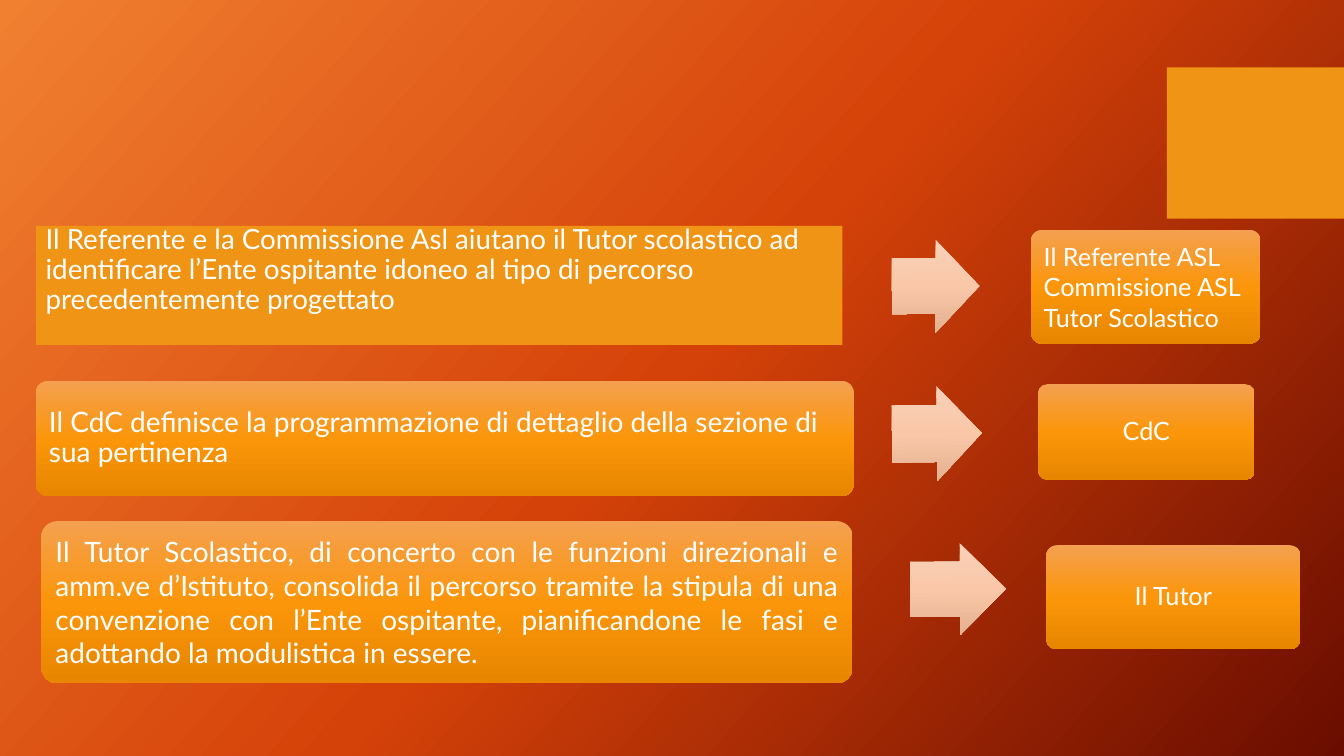
"""Build a slide that pairs three school placement steps with the people in charge."""
from dataclasses import dataclass

from lxml.etree import SubElement
from pptx import Presentation
from pptx.dml.color import RGBColor
from pptx.enum.shapes import MSO_SHAPE as Shape
from pptx.enum.text import MSO_ANCHOR as Anchor, PP_ALIGN as Align
from pptx.oxml.ns import qn
from pptx.util import Cm, Pt


@dataclass(frozen=True)
class Theme:
    font: str = "Lato"
    text: str = "FFFFFF"
    flat: tuple = ("F09415",)
    background: tuple = ("F18031", "D54209", "6A0D00")
    box: tuple = ("F4A050", "FB960A", "E88600")
    arrow: tuple = ("F8D1B9", "FAC7A8", "E3B090")
    title_size: float = 19.8
    step_size: float = 20
    role_size: float = 18


theme = Theme()


def paint_gradient(fill, element, colors, angle):
    fill.gradient()
    fill.gradient_angle = 360 - angle
    stops = next(element.iter(qn("a:gsLst")))
    for stop in list(stops):
        stops.remove(stop)
    for index, color in enumerate(colors):
        stop = SubElement(stops, qn("a:gs"), pos=str(index * 50000))
        SubElement(stop, qn("a:srgbClr"), val=color)


def add_block(kind, place, colors, adjustments=(), lines=(), size=18,
              align=Align.LEFT, spacing=1.0, anchor=Anchor.MIDDLE):
    shape = slide.shapes.add_shape(kind, *map(Cm, place))
    shape.shadow.inherit = False
    shape.line.fill.background()
    for index, value in enumerate(adjustments):
        shape.adjustments[index] = value
    if len(colors) == 1:
        shape.fill.solid()
        shape.fill.fore_color.rgb = RGBColor.from_string(colors[0])
    else:
        paint_gradient(shape.fill, shape.element, colors, 90)
    frame = shape.text_frame
    frame.word_wrap = True
    frame.vertical_anchor = anchor
    frame.margin_left = frame.margin_right = Cm(0.24)
    frame.margin_top = frame.margin_bottom = Cm(0)
    for index, line in enumerate(lines):
        paragraph = frame.add_paragraph() if index else frame.paragraphs[0]
        paragraph.alignment = align
        paragraph.line_spacing = spacing
        run = paragraph.add_run()
        run.text = line
        run.font.name = theme.font
        run.font.size = Pt(size)
        run.font.color.rgb = RGBColor.from_string(theme.text)
    return shape


presentation = Presentation()
presentation.slide_width = Cm(33.87)
presentation.slide_height = Cm(19.05)
slide = presentation.slides.add_slide(presentation.slide_layouts[6])
paint_gradient(slide.background.fill, slide.element, theme.background, 42)

add_block(Shape.RECTANGLE, (29.41, 1.7, 4.46, 3.81), theme.flat)
add_block(
    Shape.RECTANGLE, (0.91, 5.69, 20.32, 3), theme.flat,
    lines=["Il Referente e la Commissione Asl aiutano il Tutor scolastico ad "
           "identificare l’Ente ospitante idoneo al tipo di percorso "
           "precedentemente progettato"],
    size=theme.title_size, spacing=0.9, anchor=Anchor.TOP)

steps = [
    ((0.91, 9.6, 20.6, 2.9), Align.LEFT, 0.9,
     "Il CdC definisce la programmazione di dettaglio della sezione di "
     "sua pertinenza"),
    ((1.04, 13.13, 20.45, 4.09), Align.JUSTIFY, 1.0,
     "Il Tutor Scolastico, di concerto con le funzioni direzionali e amm.ve "
     "d’Istituto, consolida il percorso tramite la stipula di una "
     "convenzione con l’Ente ospitante, pianificandone le fasi e adottando "
     "la modulistica in essere."),
]
for place, align, spacing, text in steps:
    add_block(Shape.ROUNDED_RECTANGLE, place, theme.box, [0.1], [text],
              theme.step_size, align, spacing)

arrows = [
    ((22.48, 6.04, 2.2, 2.34), 359.9),
    ((22.48, 9.73, 2.26, 2.39), 359.4),
    ((22.94, 13.69, 2.41, 2.31), 359.6),
]
for place, rotation in arrows:
    arrow = add_block(Shape.RIGHT_ARROW, place, theme.arrow, [0.6, 0.5])
    arrow.rotation = rotation

roles = [
    ((25.98, 5.79, 5.79, 2.87), Align.LEFT, 1.0,
     ["Il Referente ASL", "Commissione ASL", "Tutor Scolastico"]),
    ((26.16, 9.68, 5.46, 2.41), Align.CENTER, 0.9, ["CdC"]),
    ((26.37, 13.74, 6.4, 2.62), Align.CENTER, 0.9, ["Il Tutor"]),
]
for place, align, spacing, lines in roles:
    add_block(Shape.ROUNDED_RECTANGLE, place, theme.box, [0.1], lines,
              theme.role_size, align, spacing)

presentation.save("out.pptx")
